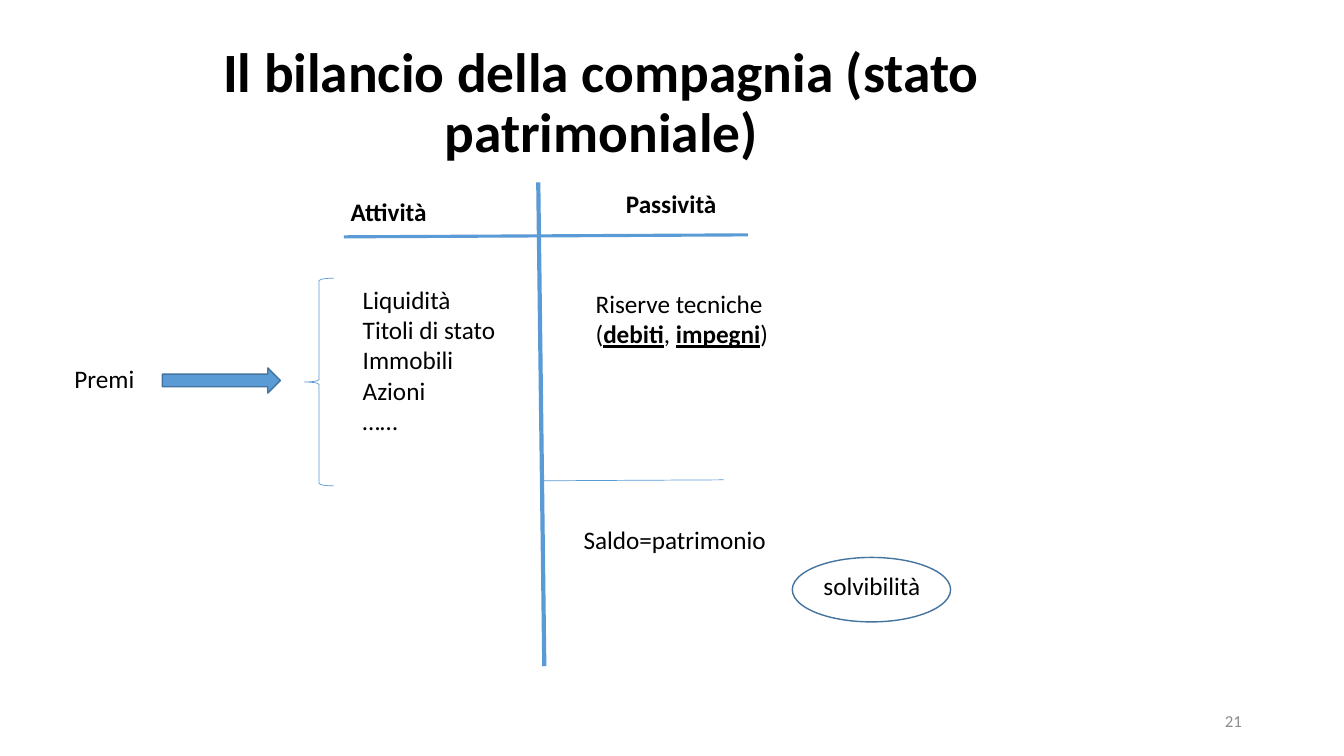
from lxml.etree import SubElement
from pptx import Presentation
from pptx.dml.color import RGBColor
from pptx.enum.shapes import MSO_CONNECTOR, MSO_SHAPE
from pptx.enum.text import MSO_ANCHOR, PP_ALIGN
from pptx.oxml.ns import qn
from pptx.util import Inches, Pt

WIDTH, HEIGHT = Inches(13.333), Inches(7.5)
BLUE, DARK_BLUE, BLACK, GREY = "5B9BD5", "43739E", "000000", "8C8C8C"
BODY = {"name": "Calibri", "size": Pt(18), "bold": False, "underline": False}
BOLD = {"bold": True}
KEYWORD = {"bold": True, "underline": True}


def color(hex_code):
    """Turn a hex string into a colour."""
    return RGBColor.from_string(hex_code)


def place(left, top, *rest):
    """Turn percentages of the slide's size into lengths."""
    sides = (WIDTH, HEIGHT, WIDTH, HEIGHT)
    return [round(side * share / 100) for side, share in zip(sides, (left, top, *rest))]


def set_line(line, hex_code, width):
    """Colour a line and set its width in points."""
    line.color.rgb = color(hex_code)
    line.width = Pt(width)


def add_text(page, area, lines, style=None, ink=BLACK, align=PP_ALIGN.LEFT,
             anchor=MSO_ANCHOR.TOP, spacing=1.0):
    """Add a text box whose lines are strings or lists of styled spans."""
    frame = page.shapes.add_textbox(*place(*area)).text_frame
    frame.word_wrap = True
    frame.vertical_anchor = anchor
    for index, line in enumerate(lines):
        para = frame.add_paragraph() if index else frame.paragraphs[0]
        para.alignment = align
        para.line_spacing = spacing
        spans = [(line, {})] if isinstance(line, str) else line
        for text, emphasis in spans:
            span = para.add_run()
            span.text = text
            span.font.color.rgb = color(ink)
            for key, value in {**BODY, **(style or {}), **emphasis}.items():
                setattr(span.font, key, value)


def add_rule(page, start, end, width):
    """Add a straight blue line without a shadow."""
    rule = page.shapes.add_connector(MSO_CONNECTOR.STRAIGHT, *place(*start, *end))
    set_line(rule.line, BLUE, width)
    SubElement(rule._element.spPr, qn("a:effectLst"))


def add_figure(page, kind, area, line, width, fill=None):
    """Add a preset shape, hollow unless a fill is given."""
    figure = page.shapes.add_shape(kind, *place(*area))
    figure.shadow.inherit = False
    set_line(figure.line, line, width)
    if fill:
        figure.fill.solid()
        figure.fill.fore_color.rgb = color(fill)
    else:
        figure.fill.background()


def main():
    """Build the balance sheet slide."""
    deck = Presentation()
    deck.slide_width, deck.slide_height = WIDTH, HEIGHT
    page = deck.slides.add_slide(deck.slide_layouts[6])

    add_text(page, (5.4, 5.33, 78.68, 16.93),
             ["Il bilancio della compagnia (stato patrimoniale)"],
             {"size": Pt(39.6), "bold": True}, align=PP_ALIGN.CENTER,
             anchor=MSO_ANCHOR.MIDDLE, spacing=0.9)
    add_text(page, (70.65, 92.67, 22.5, 5.33), ["21"], {"size": Pt(12)}, GREY,
             PP_ALIGN.RIGHT, MSO_ANCHOR.MIDDLE)

    add_rule(page, (40.05, 24.13), (40.5, 88.13), 3)
    add_rule(page, (25.58, 31.33), (55.65, 31.07), 2.25)
    add_rule(page, (40.35, 63.6), (53.85, 63.47), 0.5)

    add_text(page, (25.35, 25.33, 12.6, 5.33), ["Attività"], BOLD)
    add_text(page, (45.83, 24.27, 12.3, 5.33), ["Passività"], BOLD)
    add_text(page, (26.25, 36.93, 12.53, 25.6),
             ["Liquidità", "Titoli di stato", "Immobili", "Azioni", "……"])
    add_text(page, (43.58, 37.47, 16.2, 9.47),
             ["Riserve tecniche",
              [("(", {}), ("debiti", KEYWORD), (", ", {}), ("impegni", KEYWORD), (")", {})]])
    add_text(page, (42.68, 68.67, 15.23, 5.33), ["Saldo=patrimonio"])
    add_text(page, (4.8, 47.47, 12.83, 9.47), ["Premi"])
    add_text(page, (60.53, 74.8, 15.3, 5.33), ["solvibilità"])

    add_figure(page, MSO_SHAPE.RIGHT_ARROW, (12.08, 48.67, 8.78, 3.33), DARK_BLUE, 1, BLUE)
    add_figure(page, MSO_SHAPE.LEFT_BRACE, (22.65, 36.8, 2.18, 27.47), BLUE, 0.5)
    add_figure(page, MSO_SHAPE.OVAL, (58.95, 73.73, 11.78, 8.53), DARK_BLUE, 1)

    deck.save("out.pptx")


if __name__ == "__main__":
    main()
